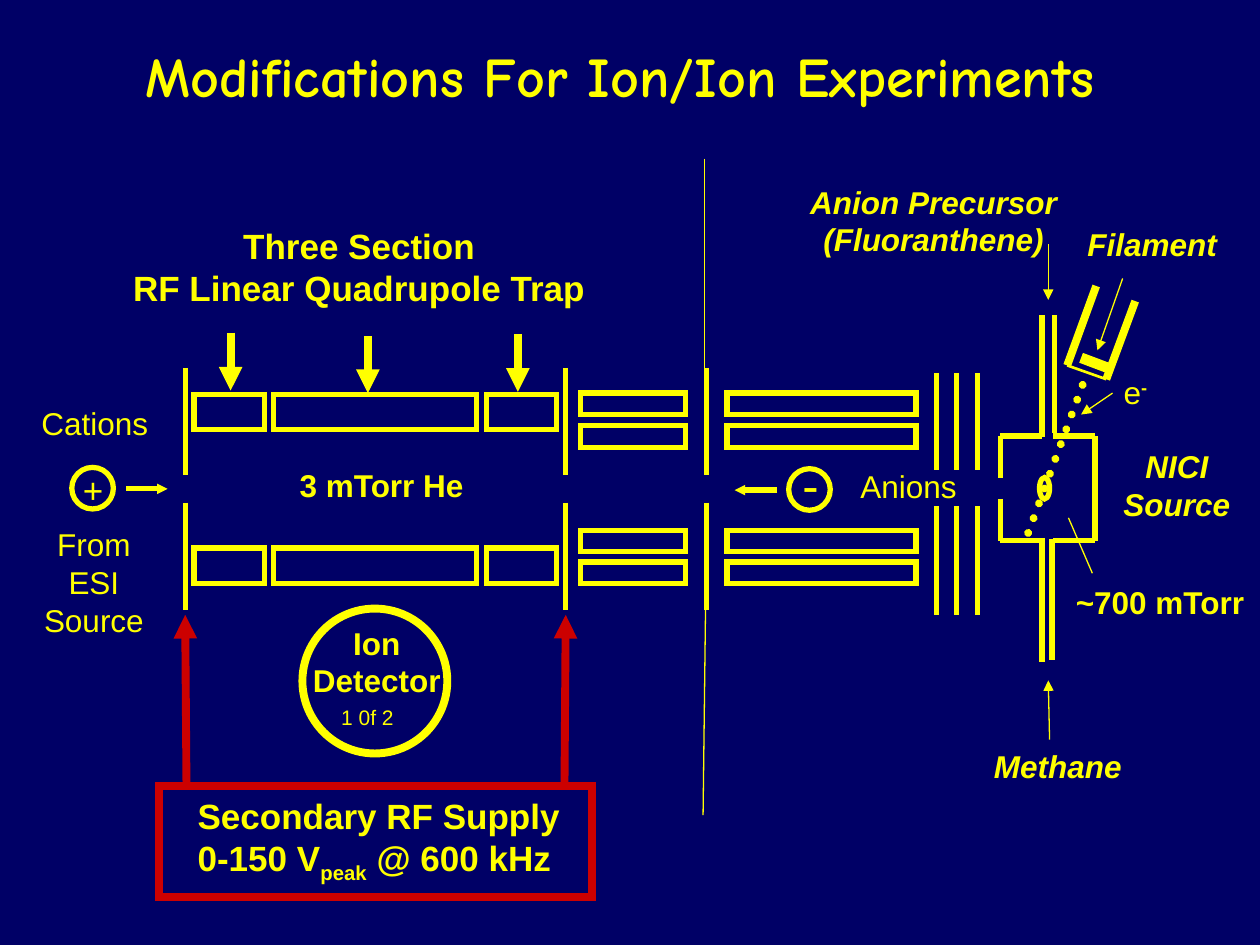
from lxml import etree
from pptx import Presentation
from pptx.dml.color import RGBColor
from pptx.enum import dml, shapes, text
from pptx.oxml.ns import qn
from pptx.util import Inches, Pt

C = {"bg": "000066", "ink": "FFFF00", "rf": "CC0000"}

prs = Presentation()
prs.slide_width, prs.slide_height = Inches(10), Inches(7.5)
col, row = prs.slide_width / 100, prs.slide_height / 75
s = prs.slides.add_slide(prs.slide_layouts[5])
s.background.fill.solid()
s.background.fill.fore_color.rgb = RGBColor.from_string(C["bg"])


def stroke(x1, y1, x2, y2, width=3, head=None, color="ink"):
    ln = s.shapes.add_connector(shapes.MSO_CONNECTOR.STRAIGHT, int(x1 * col), int(y1 * row),
                                int(x2 * col), int(y2 * row))
    ln.line.width = Pt(width)
    ln.line.color.rgb = RGBColor.from_string(C[color])
    if head:
        etree.SubElement(ln.line._get_or_add_ln(), qn("a:tailEnd"), type="triangle", w=head, len=head)
    etree.SubElement(ln._element.spPr, qn("a:effectLst"))
    return ln


def label(sp, x, y, w, h, lines, size=18, bold=False, italic=False, centre=False, font="Arial"):
    sp.left, sp.top, sp.width, sp.height = int(x * col), int(y * row), int(w * col), int(h * row)
    tf = sp.text_frame
    tf.word_wrap = False
    tf.auto_size = text.MSO_AUTO_SIZE.SHAPE_TO_FIT_TEXT
    tf.vertical_anchor = text.MSO_ANCHOR.TOP
    for i, runs in enumerate(lines):
        p = tf.add_paragraph() if i else tf.paragraphs[0]
        p.alignment = text.PP_ALIGN.CENTER if centre else text.PP_ALIGN.LEFT
        p.font.size, p.font.name = Pt(size), font
        p.font.bold, p.font.italic = bold, italic
        p.font.color.rgb = RGBColor.from_string(C["ink"])
        for part, baseline in [(runs, 0)] if isinstance(runs, str) else runs:
            r = p.add_run()
            r.text = part
            if baseline:
                r.font.bold = True
                r._r.get_or_add_rPr().set("baseline", str(baseline * 1000))


label(s.shapes.title, 6.8, 2.8, 84.9, 6.4, ["Modifications For Ion/Ion Experiments"],
      32, True, centre=True, font="Comic Neue")

RECT, OVAL = shapes.MSO_SHAPE.RECTANGLE, shapes.MSO_SHAPE.OVAL
outlines = [
    (OVAL, 5.7, 37.1, 3.3, 3.3, 3, "ink"),
    (OVAL, 62.6, 37.2, 3.3, 3.3, 3, "ink"),
    (OVAL, 82.5, 37.9, 0.8, 1.7, 3, "ink"),
    (OVAL, 24, 48.3, 11.5, 11.5, 4.5, "ink"),
    (RECT, 12.6, 62.4, 34.4, 8.8, 4.5, "rf"),
]
for y in (31.3, 43.5):
    for x, w in ((15.4, 5.6), (21.7, 16.1), (38.6, 5.6)):
        outlines.append((RECT, x, y, w, 2.8, 3, "ink"))
for x, w in ((46.1, 8.3), (57.7, 15)):
    for y in (31.2, 33.8, 42.1, 44.6):
        outlines.append((RECT, x, y, w, 1.7, 3, "ink"))
for kind, x, y, w, h, width, color in outlines:
    sp = s.shapes.add_shape(kind, int(x * col), int(y * row), int(w * col), int(h * row))
    sp.shadow.inherit = False
    sp.fill.background()
    sp.line.width = Pt(width)
    sp.line.color.rgb = RGBColor.from_string(C[color])
    etree.SubElement(sp.line._get_or_add_ln(), qn("a:miter"), lim="800000")

for x in (14.7, 44.9, 56.1):
    stroke(x, 29.2, x, 37.7)
    stroke(x, 39.9, x, 48.4)
for x in (74.3, 75.9, 77.6):
    stroke(x, 29.6, x, 37.3)
    stroke(x, 40.2, x, 48.8)

for wall, inner in ((79.4, 82.7), (86.9, 83.6)):
    for edge, gap in ((34.6, 37.9), (42.9, 39.6)):
        stroke(wall, gap, wall, edge)
        stroke(wall, edge, inner, edge)
stroke(86.9, 35.4, 86.9, 42.1)
for x, top, bottom in ((82.7, 25, 34.7), (83.7, 25, 34.4), (82.7, 42.7, 52.5), (83.5, 42.8, 52.4)):
    stroke(x, top, x, bottom)

for x1, y1, x2, y2, width in ((87.8, 30.1, 90.1, 23.9, 4.5), (84.7, 29, 87, 22.7, 4.5),
                              (87.8, 30.1, 84.7, 29, 1.5), (88.2, 29.3, 85.8, 28.4, 6),
                              (55.9, 12.6, 55.9, 29.3, 0.75), (56, 47.9, 55.8, 64.7, 0.75),
                              (86.7, 45.5, 84.8, 41.1, 0.75)):
    stroke(x1, y1, x2, y2, width)
beam = stroke(81.6, 42.3, 86.2, 29.8, 4.5)
beam.line.dash_style = dml.MSO_LINE.ROUND_DOT
beam.line._get_or_add_ln().set("cap", "rnd")

for x1, y1, x2, y2, width, head, color in (
        (10, 38.8, 13.3, 38.8, 3, "sm", "ink"), (61.7, 38.9, 58.3, 38.9, 3, "sm", "ink"),
        (18.3, 26.4, 18.3, 31, 4.5, "med", "ink"), (29.2, 26.7, 29.2, 31.2, 4.5, "med", "ink"),
        (41.1, 26.5, 41.1, 31.1, 4.5, "med", "ink"),
        (14.8, 62.2, 14.7, 48.8, 4.5, "med", "rf"), (44.8, 62.5, 44.9, 48.8, 4.5, "med", "rf"),
        (89.1, 22.1, 87.1, 27.8, 0.75, "med", "ink"), (83.2, 19.4, 83.2, 23.8, 0.75, "med", "ink"),
        (88.3, 31.2, 85.8, 32.9, 0.75, "med", "ink"), (83.3, 58.7, 83.2, 54, 0.75, "med", "ink")):
    stroke(x1, y1, x2, y2, width, head, color)

for x, y, w, h, lines, size, bold, italic, centre in (
        (5.6, 36.7, 3.6, 4.3, ["+"], 20, False, False, False),
        (62.7, 35.6, 3.3, 5.7, ["-"], 28, False, False, False),
        (23.8, 49, 12.2, 7, ["Ion", "Detector"], 18, True, False, True),
        (26.1, 55.4, 6.2, 3, ["1 0f 2"], 12, False, False, False),
        (8.9, 17.3, 39.2, 7.7, ["Three Section", "RF Linear Quadrupole Trap"], 20, True, False, True),
        (2.3, 31.6, 10.5, 4, ["Cations"], 18, False, False, False),
        (2.5, 41.2, 9.9, 10, ["From", "ESI", "Source"], 18, False, False, True),
        (22.8, 36.5, 15.2, 4, ["3 mTorr He"], 18, True, False, False),
        (67.3, 36.6, 9.7, 4, ["Anions"], 18, False, False, False),
        (87.8, 35, 11.2, 7, ["NICI", "Source"], 18, True, True, True),
        (85.3, 17.4, 12.3, 4, ["Filament"], 18, True, True, True),
        (77.9, 58.8, 12.2, 4, ["Methane"], 18, True, True, False),
        (63.3, 14, 21.6, 7, ["Anion Precursor", "(Fluoranthene)"], 18, True, True, True),
        (84.4, 45.8, 15.6, 4, ["~700 mTorr"], 18, True, False, False),
        (88.2, 29.1, 4, 4, [[("e", 0), ("-", 30)]], 18, False, False, False),
        (14.7, 62.6, 32, 7.7,
         ["Secondary RF Supply", [("0-150 V", 0), ("peak", -25), (" @ 600 kHz", 0)]],
         20, True, False, False)):
    label(s.shapes.add_textbox(0, 0, 0, 0), x, y, w, h, lines, size, bold, italic, centre)

prs.save("out.pptx")
